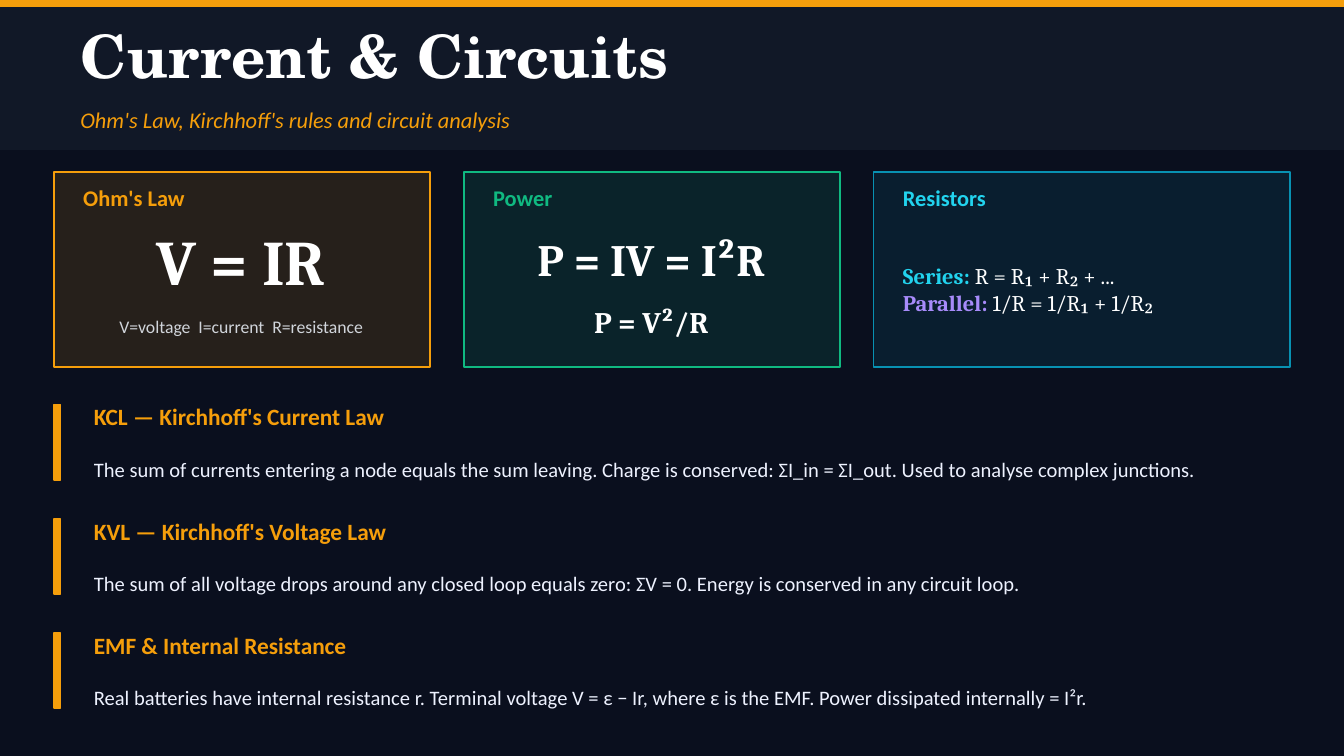
from lxml import etree
from pptx import Presentation
from pptx.dml.color import RGBColor
from pptx.enum import shapes, text
from pptx.oxml.ns import qn
from pptx.util import Inches, Pt

COLORS = {
    "background": "0A0F1E", "header": "111827", "amber": "F59E0B",
    "green": "10B981", "teal": "0891B2", "cyan": "22D3EE",
    "violet": "A78BFA", "white": "FFFFFF", "grey": "D1D5DB", "pale": "EEF2FF",
}

prs = Presentation()
prs.slide_width, prs.slide_height = Inches(10), Inches(10 * 9 / 16)
slide = prs.slides.add_slide(prs.slide_layouts[5])
slide.background.fill.solid()
slide.background.fill.fore_color.rgb = RGBColor.from_string(COLORS["background"])


def add_panel(left, top, width, height, color, opacity=None):
    """Add a rectangle outlined in its fill colour; opacity is in percent."""
    panel = slide.shapes.add_shape(
        shapes.MSO_SHAPE.RECTANGLE, *map(Inches, (left, top, width, height)))
    panel.shadow.inherit = False
    rgb = RGBColor.from_string(COLORS[color])
    panel.fill.solid()
    panel.fill.fore_color.rgb = rgb
    panel.line.color.rgb = rgb
    panel.line.width = Pt(1)
    if opacity is not None:
        tint = panel.element.spPr.find(qn("a:solidFill"))[0]
        etree.SubElement(tint, qn("a:alpha"), val=str(opacity * 1000))
    return panel


def write(lines, left, top, width, height, *, size, color="white", font="Calibri",
          bold=False, italic=False, centered=False, holder=None):
    """Write a string, or lines of (text, color, bold) runs, in a box or placeholder."""
    box = holder or slide.shapes.add_textbox(0, 0, 0, 0)
    box.left, box.top, box.width, box.height = map(Inches, (left, top, width, height))
    frame = box.text_frame
    frame.word_wrap = True
    frame.auto_size = text.MSO_AUTO_SIZE.NONE
    frame.vertical_anchor = text.MSO_ANCHOR.MIDDLE
    paragraph = frame.paragraphs[0]
    paragraph.alignment = text.PP_ALIGN.CENTER if centered else text.PP_ALIGN.LEFT
    if isinstance(lines, str):
        lines = [[(lines, color, bold)]]
    for number, runs in enumerate(lines):
        if number:
            paragraph.add_line_break()
        for words, run_color, run_bold in runs:
            run = paragraph.add_run()
            run.text = words
            run.font.name, run.font.size = font, Pt(size)
            run.font.bold, run.font.italic = run_bold, italic
            run.font.color.rgb = RGBColor.from_string(COLORS[run_color])


# Header
add_panel(0, 0, 10, 0.06, "amber")
header = add_panel(0, 0.06, 10, 1.05, "header")
title = slide.shapes.title
header.element.addnext(title.element)  # bring the title in front of the header
write("Current & Circuits", 0.5, 0.1, 9, 0.62, size=32, font="TeX Gyre Schola",
      bold=True, holder=title)
write("Ohm's Law, Kirchhoff's rules and circuit analysis", 0.5, 0.74, 8, 0.3,
      size=12, color="amber", italic=True)

# Formula cards: each content row is (text, top, height, format)
formula = {"font": "Cambria", "bold": True, "centered": True}
resistor_rules = [
    [("Series: ", "cyan", True), ("R = R₁ + R₂ + ...", "white", False)],
    [("Parallel: ", "violet", True), ("1/R = 1/R₁ + 1/R₂", "white", False)],
]
cards = [
    ("Ohm's Law", 2.8, "amber", "amber", [
        ("V = IR", 1.66, 0.55, {"size": 34, **formula}),
        ("V=voltage  I=current  R=resistance", 2.23, 0.4,
         {"size": 9.5, "color": "grey", "centered": True})]),
    ("Power", 2.8, "green", "green", [
        ("P = IV = I²R", 1.65, 0.55, {"size": 24, **formula}),
        ("P = V²/R", 2.2, 0.38, {"size": 16, **formula})]),
    ("Resistors", 3.1, "teal", "cyan", [
        (resistor_rules, 1.65, 1, {"size": 12, "font": "Cambria"})]),
]
card_left = 0.4
for heading, card_width, card_color, heading_color, rows in cards:
    add_panel(card_left, 1.28, card_width, 1.45, card_color, opacity=12)
    inner_left, inner_width = card_left + 0.12, card_width - 0.25
    write(heading, inner_left, 1.32, inner_width, 0.3, size=12,
          color=heading_color, bold=True)
    for content, row_top, row_height, style in rows:
        write(content, inner_left, row_top, inner_width, row_height, **style)
    card_left += card_width + 0.25

# Circuit laws
laws = [
    ("KCL — Kirchhoff's Current Law",
     "The sum of currents entering a node equals the sum leaving. Charge is conserved: "
     "ΣI_in = ΣI_out. Used to analyse complex junctions."),
    ("KVL — Kirchhoff's Voltage Law",
     "The sum of all voltage drops around any closed loop equals zero: ΣV = 0. "
     "Energy is conserved in any circuit loop."),
    ("EMF & Internal Resistance",
     "Real batteries have internal resistance r. Terminal voltage V = ε − Ir, "
     "where ε is the EMF. Power dissipated internally = I²r."),
]
for index, (law, explanation) in enumerate(laws):
    law_top = 2.95 + 0.85 * index
    add_panel(0.4, law_top + 0.06, 0.05, 0.56, "amber")
    write(law, 0.6, law_top, 9, 0.3, size=12.5, color="amber", bold=True)
    write(explanation, 0.6, law_top + 0.3, 9.1, 0.48, size=11, color="pale")

prs.save("out.pptx")
